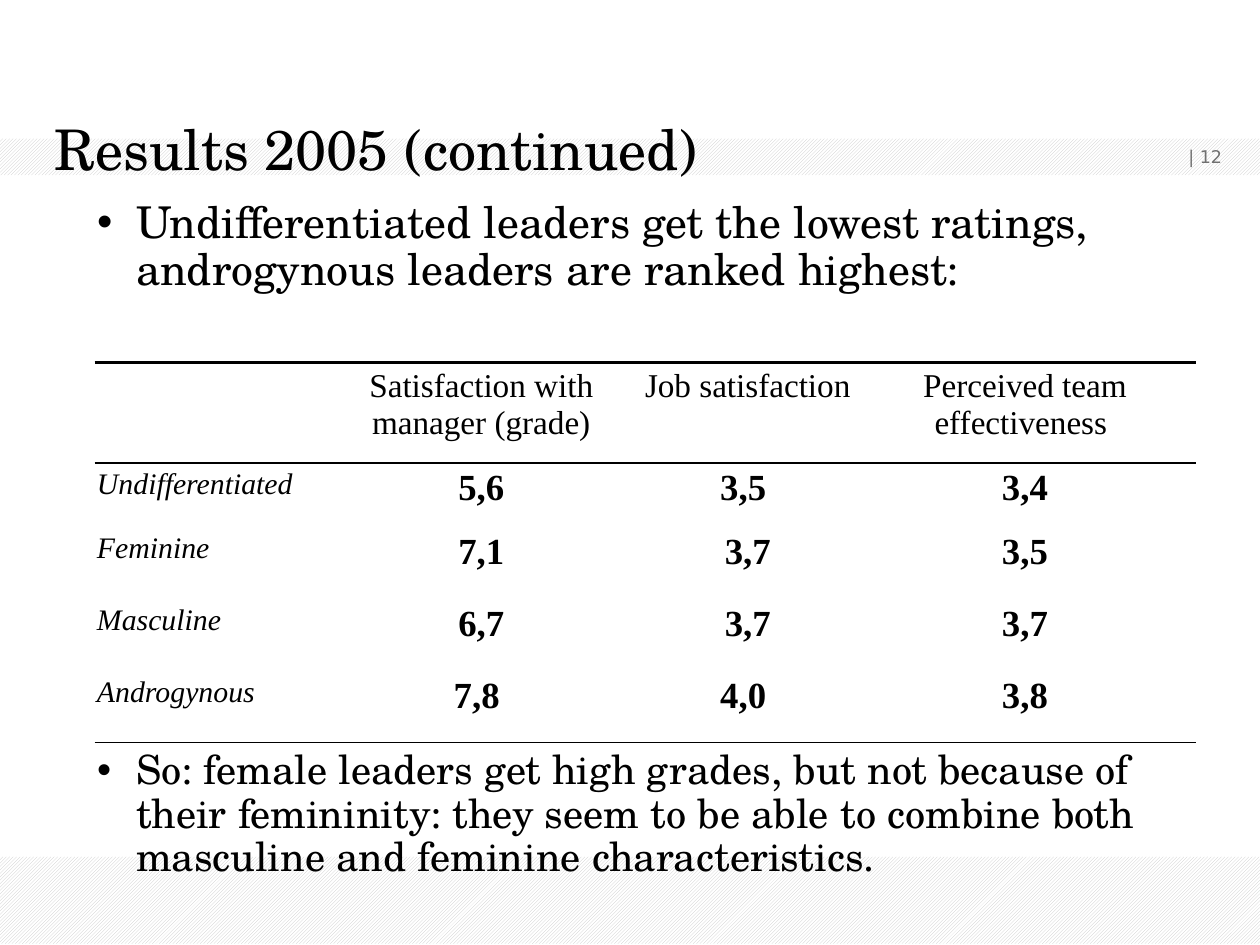
"""Build the leadership results slide with its ratings table and two conclusions."""
from dataclasses import dataclass

import pptx
import pptx.dml.color
import pptx.enum.dml
import pptx.enum.shapes
import pptx.enum.text
import pptx.oxml.ns
import pptx.util
from lxml import etree
from pptx.util import Inches


@dataclass(frozen=True)
class Theme:
    ink: str = "000000"
    paper: str = "FFFFFF"
    hatch: str = "C8C8C8"
    muted: str = "707070"
    heading_font: str = "TeX Gyre Schola"
    table_font: str = "Times New Roman"
    number_font: str = "DejaVu Sans"
    title_size: int = 32
    finding_size: int = 25
    conclusion_size: int = 23
    header_size: int = 19
    label_size: int = 17
    value_size: int = 21
    number_size: int = 10


theme = Theme()
qn = pptx.oxml.ns.qn
rgb = pptx.dml.color.RGBColor.from_string
ALIGN = pptx.enum.text.PP_ALIGN
ANCHOR = pptx.enum.text.MSO_ANCHOR


def add_run(paragraph, text, font, size, color=theme.ink, bold=False, italic=False):
    run = paragraph.add_run()
    run.text = text
    run.font.name = font
    run.font.size = pptx.util.Pt(size)
    run.font.color.rgb = rgb(color)
    run.font.bold = bold
    run.font.italic = italic


def set_borders(cell, top, bottom):
    properties = cell._tc.get_or_add_tcPr()
    widths = {"a:lnL": 0, "a:lnR": 0, "a:lnT": top, "a:lnB": bottom}
    for position, (side, width) in enumerate(widths.items()):
        line = etree.Element(qn(side), w=str(pptx.util.Pt(width)))
        if width:
            fill = etree.SubElement(line, qn("a:solidFill"))
            etree.SubElement(fill, qn("a:srgbClr"), val=theme.ink)
        else:
            etree.SubElement(line, qn("a:noFill"))
        properties.insert(position, line)


presentation = pptx.Presentation()
presentation.slide_width = Inches(10)
presentation.slide_height = Inches(7.5)
slide = presentation.slides.add_slide(presentation.slide_layouts[1])
slide.background.fill.solid()
slide.background.fill.fore_color.rgb = rgb(theme.paper)

for position, (top, height) in enumerate([(1.1, 0.29), (6.8, 0.69)]):
    band = slide.shapes.add_shape(
        pptx.enum.shapes.MSO_SHAPE.RECTANGLE, 0, Inches(top), Inches(10), Inches(height))
    band.shadow.inherit = False
    band.line.fill.background()
    band.fill.patterned()
    band.fill.pattern = pptx.enum.dml.MSO_PATTERN.LIGHT_UPWARD_DIAGONAL
    band.fill.fore_color.rgb = rgb(theme.hatch)
    band.fill.back_color.rgb = rgb(theme.paper)
    slide.shapes.element.insert(2 + position, band.element)

number_box = slide.shapes.add_textbox(Inches(9.29), Inches(1.1), Inches(0.71), Inches(0.29))
number_box.text_frame.word_wrap = True
number_box.text_frame.vertical_anchor = ANCHOR.MIDDLE
add_run(number_box.text_frame.paragraphs[0], " | 12",
        theme.number_font, theme.number_size, theme.muted)

title = slide.shapes.title
body = slide.placeholders[1]
for placeholder, box in [(title, (0.43, 0.91, 8.68, 0.72)), (body, (0.27, 1.59, 9.45, 5.91))]:
    placeholder.left, placeholder.top, placeholder.width, placeholder.height = map(Inches, box)
    frame = placeholder.text_frame
    frame.margin_left = frame.margin_top = frame.margin_right = frame.margin_bottom = 0
    frame.vertical_anchor = ANCHOR.TOP
    frame.auto_size = pptx.enum.text.MSO_AUTO_SIZE.NONE
    frame.word_wrap = True

heading = title.text_frame.paragraphs[0]
heading.alignment = ALIGN.LEFT
add_run(heading, "Results 2005 (continued)", theme.heading_font, theme.title_size)

finding = body.text_frame.paragraphs[0]
conclusion = body.text_frame.add_paragraph()
bullets = [
    (finding, "Undifferentiated leaders get the lowest ratings, "
     "androgynous leaders are ranked highest:", theme.finding_size, 0),
    (conclusion, "So: female leaders get high grades, but not because of their femininity: "
     "they seem to be able to combine both masculine and feminine characteristics.",
     theme.conclusion_size, 260),
]
for paragraph, text, size, space_before in bullets:
    paragraph.level = 1
    properties = paragraph._p.get_or_add_pPr()
    properties.set("marL", str(Inches(0.81)))
    properties.set("indent", str(Inches(-0.31)))
    etree.SubElement(properties, qn("a:buChar"), char="•")
    paragraph.line_spacing = 0.9
    paragraph.space_before = pptx.util.Pt(space_before)
    add_run(paragraph, text, theme.heading_font, size)

ratings = [
    ["", "Satisfaction with manager (grade)", "Job satisfaction", "Perceived team effectiveness "],
    ["Undifferentiated", "5,6", "3,5 ", "3,4"],
    ["Feminine", "7,1", "3,7", "3,5"],
    ["Masculine", "6,7", "3,7", "3,7"],
    ["Androgynous", "7,8 ", "4,0 ", "3,8"],
]
column_widths = [1.8, 2.54, 1.69, 2.71]
row_heights = [0.79, 0.47, 0.57, 0.57, 0.57]
table = slide.shapes.add_table(
    len(ratings), len(column_widths), Inches(0.75), Inches(2.88),
    Inches(sum(column_widths)), Inches(sum(row_heights))).table
table.first_row = False
table.horz_banding = False
for column, width in zip(table.columns, column_widths):
    column.width = Inches(width)
for row, height in zip(table.rows, row_heights):
    row.height = Inches(height)

last_row = len(ratings) - 1
for row_index, values in enumerate(ratings):
    for column_index, value in enumerate(values):
        cell = table.cell(row_index, column_index)
        cell.margin_left = cell.margin_right = Inches(0.02)
        cell.margin_top = Inches(0.04)
        cell.margin_bottom = Inches(0.12)
        cell.vertical_anchor = ANCHOR.TOP
        cell.fill.background()
        set_borders(cell, {0: 2, 1: 1}.get(row_index, 0), 1 if row_index in (0, last_row) else 0)
        is_header = row_index == 0
        is_label = column_index == 0
        if is_header:
            size = theme.header_size
        else:
            size = theme.label_size if is_label else theme.value_size
        paragraph = cell.text_frame.paragraphs[0]
        paragraph.alignment = ALIGN.LEFT if is_label else ALIGN.CENTER
        if value:
            add_run(paragraph, value, theme.table_font, size,
                    bold=not is_header and not is_label, italic=is_label)

presentation.save("out.pptx")
